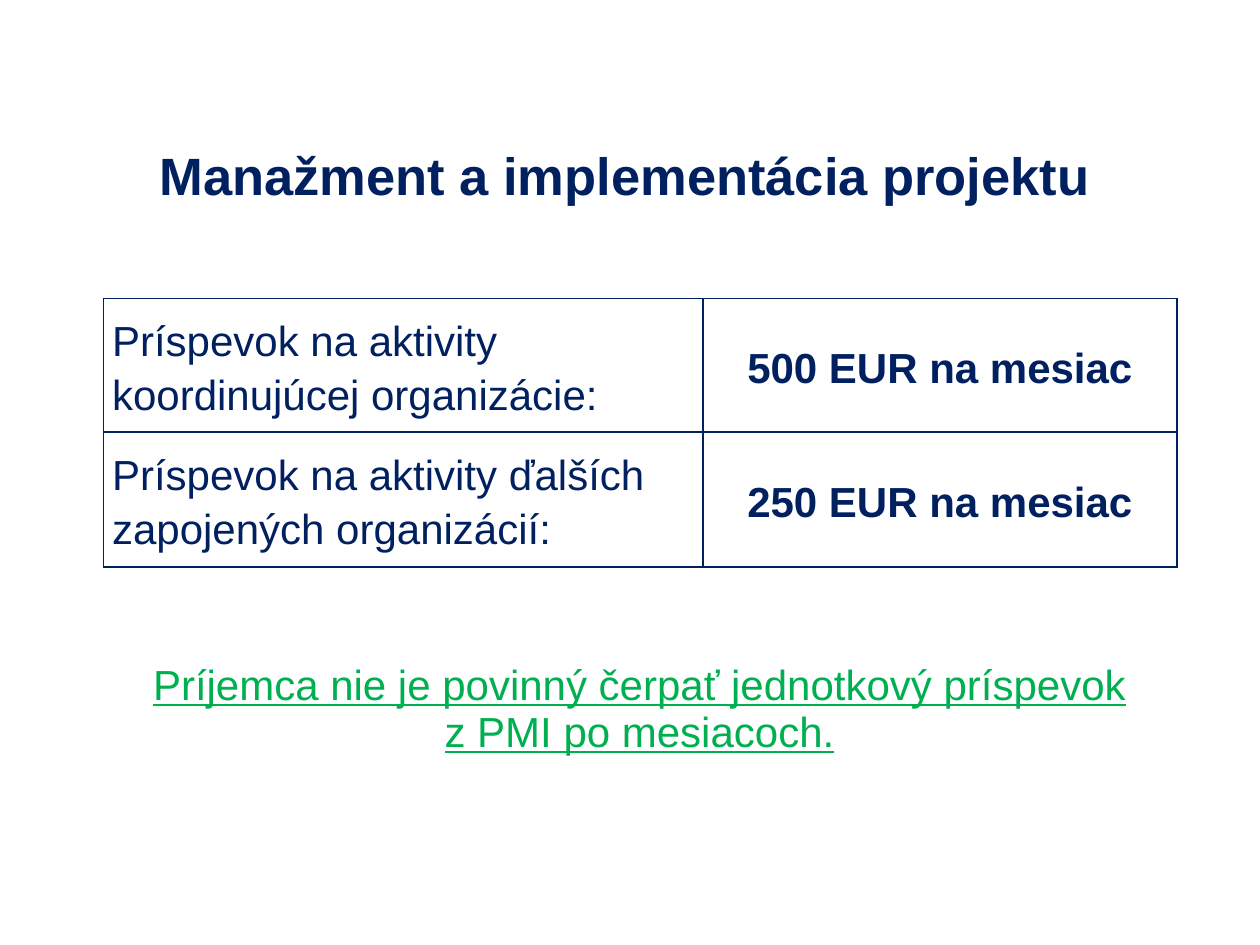
from dataclasses import dataclass

from lxml import etree
from pptx import Presentation
from pptx.dml.color import RGBColor
from pptx.enum import text
from pptx.oxml import ns
from pptx.util import Inches, Pt

TITLE = "Manažment a implementácia projektu"
RATES = [
    ("Príspevok na aktivity koordinujúcej organizácie:", "500 EUR na mesiac"),
    ("Príspevok na aktivity ďalších zapojených organizácií:", "250 EUR na mesiac"),
]
NOTICE = "Príjemca nie je povinný čerpať jednotkový príspevok z PMI po mesiacoch."


@dataclass(frozen=True)
class Theme:
    font: str = "Arial"
    navy: str = "002060"
    green: str = "00B050"
    title_size: int = 30
    body_size: int = 24
    border_width: int = 1


THEME = Theme()


def write(frame, words, size, color, bold=False, underline=False,
          centred=True, spacing=None):
    paragraph = frame.paragraphs[0]
    paragraph.alignment = text.PP_ALIGN.CENTER if centred else text.PP_ALIGN.LEFT
    if spacing:
        paragraph.line_spacing = spacing
    run = paragraph.add_run()
    run.text = words
    run.font.name = THEME.font
    run.font.size = Pt(size)
    run.font.bold = bold
    run.font.underline = underline
    run.font.color.rgb = RGBColor.from_string(color)


def add_plain_table(slide, left, top, column_widths, row_heights):
    """Add a table without banding, header style or cell fills."""
    table = slide.shapes.add_table(
        len(row_heights), len(column_widths), Inches(left), Inches(top),
        Inches(sum(column_widths)), Inches(sum(row_heights))).table
    table.first_row = table.horz_banding = False
    for column, width in zip(table.columns, column_widths):
        column.width = Inches(width)
    for row, height in zip(table.rows, row_heights):
        row.height = Inches(height)
    for cell in table.iter_cells():
        cell.fill.background()
    return table


def outline(cell, color, width):
    """Draw all four borders; they must precede the fill in the cell XML."""
    properties = cell._tc.get_or_add_tcPr()
    for position, side in enumerate(("lnL", "lnR", "lnT", "lnB")):
        line = etree.Element(ns.qn(f"a:{side}"), w=str(Pt(width)))
        fill = etree.SubElement(line, ns.qn("a:solidFill"))
        etree.SubElement(fill, ns.qn("a:srgbClr"), val=color)
        properties.insert(position, line)


def add_title(slide):
    frame = slide.shapes.add_textbox(
        Inches(0.71), Inches(1.11), Inches(8.5), Inches(0.55)).text_frame
    frame.word_wrap = True
    frame.vertical_anchor = text.MSO_ANCHOR.MIDDLE
    write(frame, TITLE, THEME.title_size, THEME.navy, bold=True)


def add_rates(slide):
    table = add_plain_table(slide, 0.82, 2.37, [4.76, 3.76], [1.06, 1.07])
    for row, entries in zip(table.rows, RATES):
        for column, (cell, words) in enumerate(zip(row.cells, entries)):
            is_amount = column == 1
            cell.vertical_anchor = text.MSO_ANCHOR.MIDDLE
            cell.margin_left = cell.margin_right = Inches(0.07)
            cell.margin_top = cell.margin_bottom = 0
            outline(cell, THEME.navy, THEME.border_width)
            write(cell.text_frame, words, THEME.body_size, THEME.navy,
                  bold=is_amount, centred=is_amount, spacing=1.15)


def add_notice(slide):
    table = add_plain_table(slide, 1.07, 5.21, [8.01], [0.9])
    write(table.cell(0, 0).text_frame, NOTICE, THEME.body_size, THEME.green,
          underline=True)


def main():
    deck = Presentation()
    deck.slide_width, deck.slide_height = Inches(10), Inches(7.5)
    slide = deck.slides.add_slide(deck.slide_layouts[6])
    add_title(slide)
    add_rates(slide)
    add_notice(slide)
    deck.save("out.pptx")


if __name__ == "__main__":
    main()
